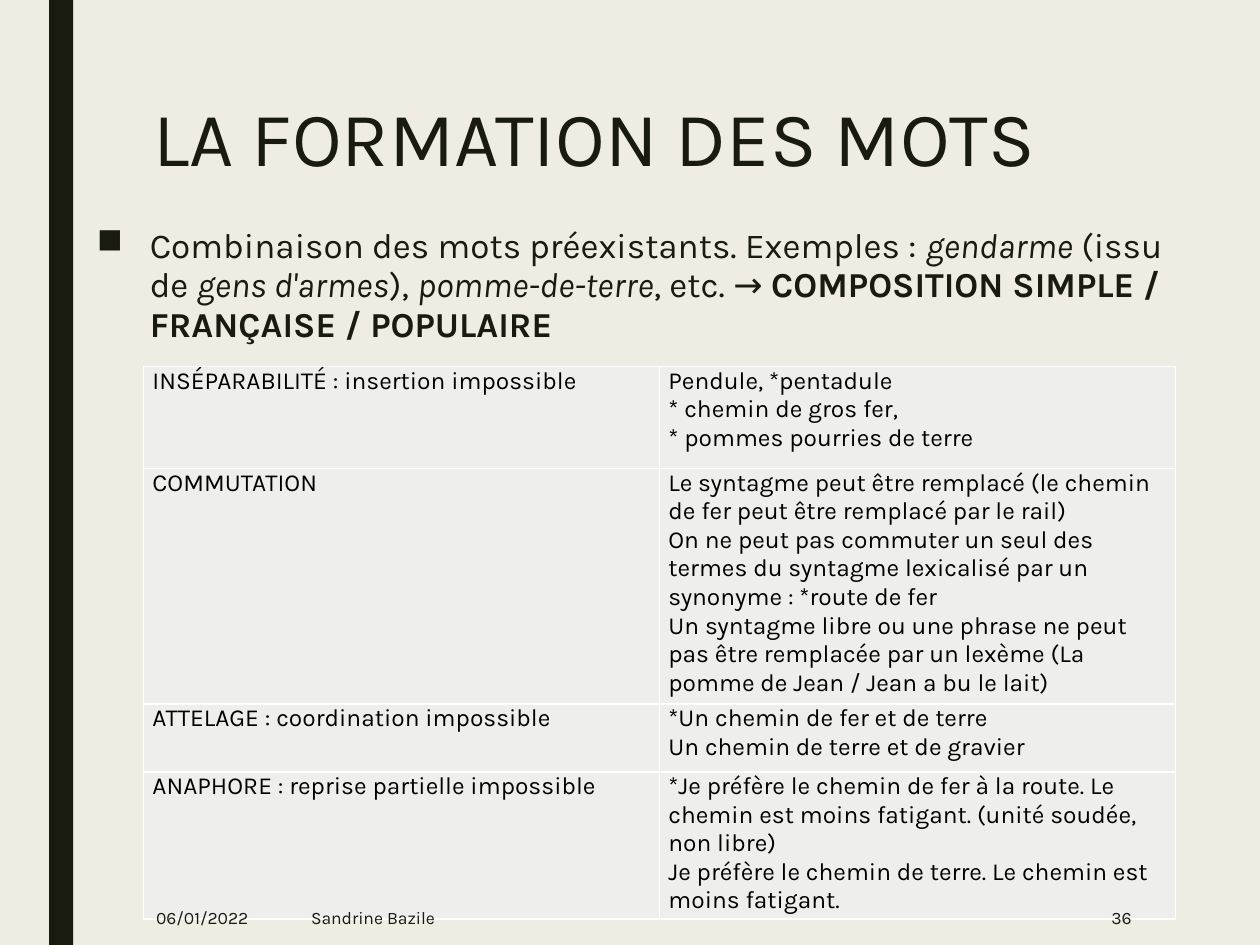
from dataclasses import dataclass

from lxml.etree import SubElement
from pptx import Presentation
from pptx.dml.color import RGBColor
from pptx.enum.shapes import MSO_SHAPE
from pptx.enum.text import MSO_ANCHOR, PP_ALIGN
from pptx.oxml.ns import qn
from pptx.slide import Slide
from pptx.table import _Cell
from pptx.text.text import _Paragraph
from pptx.util import Inches, Pt


@dataclass(frozen=True)
class Theme:
    font: str = "Karla"
    ink: str = "191B0E"
    paper: str = "EFEDE3"
    cell: str = "EEEEED"
    cell_text: str = "000000"
    border: str = "FFFFFF"
    title_size: int = 44
    body_size: int = 20
    table_size: int = 14
    footer_size: int = 10


@dataclass(frozen=True)
class Span:
    text: str
    bold: bool = False
    italic: bool = False


@dataclass(frozen=True)
class TextBlock:
    left: float
    top: float
    width: float
    height: float
    spans: tuple[Span, ...]
    size: int
    anchor: MSO_ANCHOR = MSO_ANCHOR.TOP
    align: PP_ALIGN = PP_ALIGN.LEFT


@dataclass(frozen=True)
class Criterion:
    name: str
    examples: tuple[str, ...]
    height: float


THEME = Theme()

TITLE = TextBlock(1.12, 0.75, 7.88, 1.62, (Span("LA FORMATION DES MOTS"),), THEME.title_size)

DEFINITION = TextBlock(0.67, 1.75, 8.92, 5.54, (
    Span("Combinaison des mots préexistants. Exemples : "),
    Span("gendarme", italic=True),
    Span(" (issu de "),
    Span("gens d'armes", italic=True),
    Span("), "),
    Span("pomme-de-terre", italic=True),
    Span(", etc. → "),
    Span("COMPOSITION SIMPLE / FRANÇAISE / POPULAIRE", bold=True),
), THEME.body_size)

FOOTERS = [
    TextBlock(left, 7.06, width, 0.44, (Span(text),), THEME.footer_size, MSO_ANCHOR.MIDDLE, align)
    for left, width, text, align in (
        (1.14, 0.99, "06/01/2022", PP_ALIGN.LEFT),
        (2.37, 5.15, "Sandrine Bazile", PP_ALIGN.LEFT),
        (7.77, 1.31, "36", PP_ALIGN.RIGHT),
    )
]

CRITERIA = [
    Criterion("INSÉPARABILITÉ : insertion impossible", (
        "Pendule, *pentadule",
        "* chemin de gros fer,",
        "* pommes pourries de terre",
    ), 0.81),
    Criterion("COMMUTATION", (
        "Le syntagme peut être remplacé (le chemin de fer peut être remplacé par le rail)",
        "On ne peut pas commuter un seul des termes du syntagme lexicalisé par un synonyme : "
        "*route de fer",
        "Un syntagme libre ou une phrase ne peut pas être remplacée par un lexème "
        "(La pomme de Jean / Jean a bu le lait)",
    ), 1.5),
    Criterion("ATTELAGE : coordination impossible", (
        "*Un chemin de fer et de terre",
        "Un chemin de terre et de gravier",
    ), 0.54),
    Criterion("ANAPHORE : reprise partielle impossible", (
        "*Je préfère le chemin de fer à la route. Le chemin est moins fatigant. "
        "(unité soudée, non libre)",
        "Je préfère le chemin de terre. Le chemin est moins fatigant.",
    ), 0.86),
]


def add_span(paragraph: _Paragraph, span: Span, size: int, color: str) -> None:
    run = paragraph.add_run()
    run.text = span.text
    formats = {"name": THEME.font, "size": Pt(size), "bold": span.bold, "italic": span.italic}
    for attribute, value in formats.items():
        setattr(run.font, attribute, value)
    run.font.color.rgb = RGBColor.from_string(color)


def add_text(slide: Slide, block: TextBlock) -> _Paragraph:
    place = map(Inches, (block.left, block.top, block.width, block.height))
    frame = slide.shapes.add_textbox(*place).text_frame
    frame.word_wrap = True
    frame.vertical_anchor = block.anchor
    paragraph = frame.paragraphs[0]
    paragraph.alignment = block.align
    for span in block.spans:
        add_span(paragraph, span, block.size, THEME.ink)
    return paragraph


def add_bullet(paragraph: _Paragraph, indent: float) -> None:
    properties = paragraph._p.get_or_add_pPr()
    properties.set("marL", str(Inches(indent)))
    properties.set("indent", str(-Inches(indent)))
    SubElement(properties, qn("a:buChar"), char="■")


def add_borders(cell: _Cell) -> None:
    properties = cell._tc.get_or_add_tcPr()
    for side in ("a:lnL", "a:lnR", "a:lnT", "a:lnB"):
        line = SubElement(properties, qn(side), w=str(Pt(1)))
        fill = SubElement(line, qn("a:solidFill"))
        SubElement(fill, qn("a:srgbClr"), val=THEME.border)


def fill_cell(cell: _Cell, lines: tuple[str, ...]) -> None:
    margins = {
        "margin_left": Inches(0.07),
        "margin_right": Inches(0.07),
        "margin_top": 0,
        "margin_bottom": 0,
    }
    for attribute, value in margins.items():
        setattr(cell, attribute, value)
    add_borders(cell)
    cell.fill.solid()
    cell.fill.fore_color.rgb = RGBColor.from_string(THEME.cell)
    frame = cell.text_frame
    for index, line in enumerate(lines):
        paragraph = frame.add_paragraph() if index else frame.paragraphs[0]
        add_span(paragraph, Span(line), THEME.table_size, THEME.cell_text)


def add_criteria(slide: Slide, criteria: list[Criterion]) -> None:
    height = sum(criterion.height for criterion in criteria)
    place = map(Inches, (1.14, 2.91, 8.19, height))
    table = slide.shapes.add_table(len(criteria), 2, *place).table
    table.first_row = False
    table.horz_banding = False
    for row, criterion in enumerate(criteria):
        table.rows[row].height = Inches(criterion.height)
        fill_cell(table.cell(row, 0), (criterion.name,))
        fill_cell(table.cell(row, 1), criterion.examples)


def add_side_bar(slide: Slide) -> None:
    place = map(Inches, (0.39, 0, 0.19, 7.5))
    bar = slide.shapes.add_shape(MSO_SHAPE.RECTANGLE, *place)
    bar.shadow.inherit = False
    bar.fill.solid()
    bar.fill.fore_color.rgb = RGBColor.from_string(THEME.ink)
    bar.line.fill.background()


def main() -> None:
    deck = Presentation()
    deck.slide_width, deck.slide_height = Inches(10), Inches(7.5)
    slide = deck.slides.add_slide(deck.slide_layouts[6])
    slide.background.fill.solid()
    slide.background.fill.fore_color.rgb = RGBColor.from_string(THEME.paper)
    add_side_bar(slide)
    add_text(slide, TITLE).line_spacing = 0.89
    definition = add_text(slide, DEFINITION)
    spacing = {"line_spacing": 0.94, "space_before": Pt(10), "space_after": Pt(2)}
    for attribute, value in spacing.items():
        setattr(definition, attribute, value)
    add_bullet(definition, 0.42)
    add_criteria(slide, CRITERIA)
    for footer in FOOTERS:
        add_text(slide, footer)
    deck.save("out.pptx")


if __name__ == "__main__":
    main()
